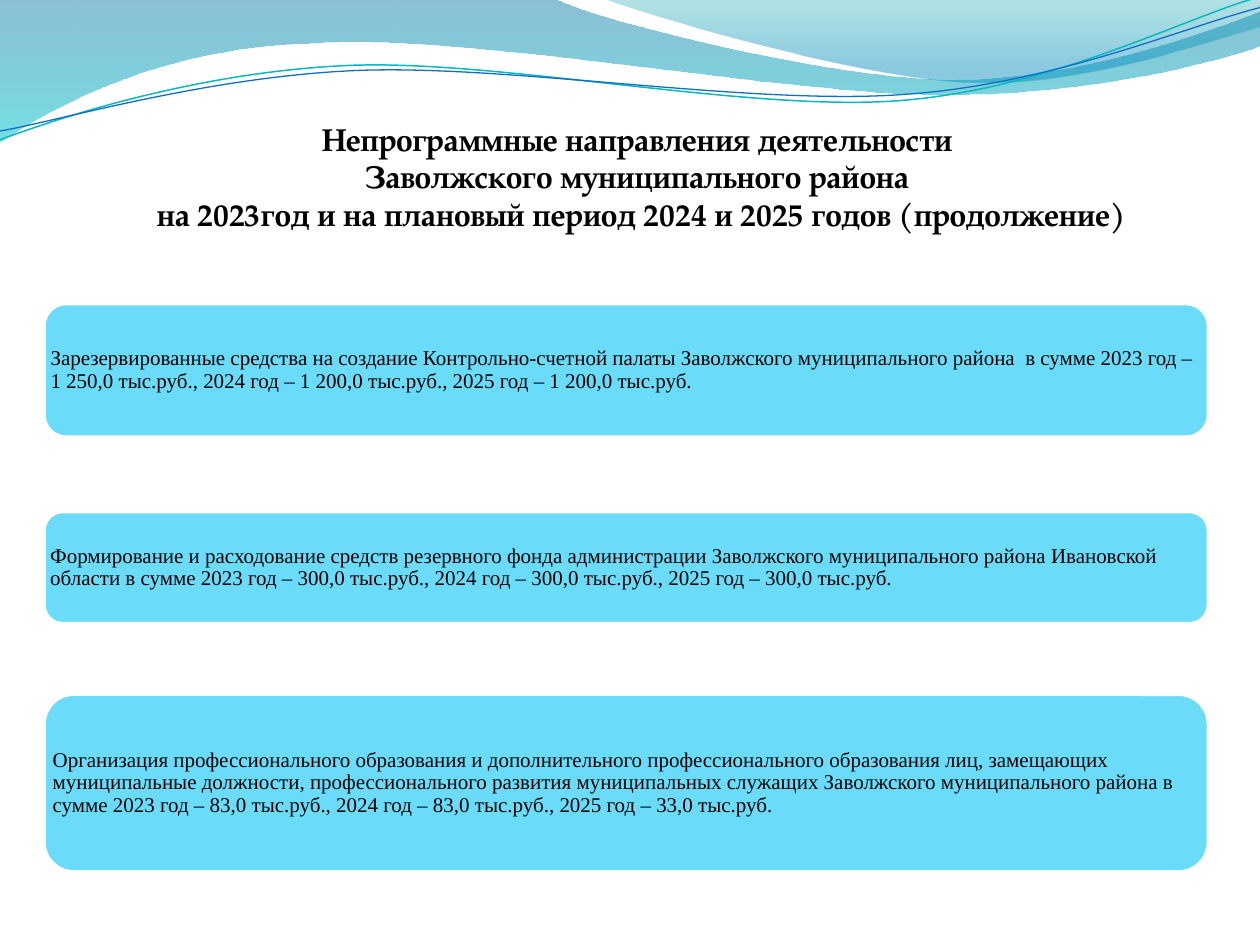
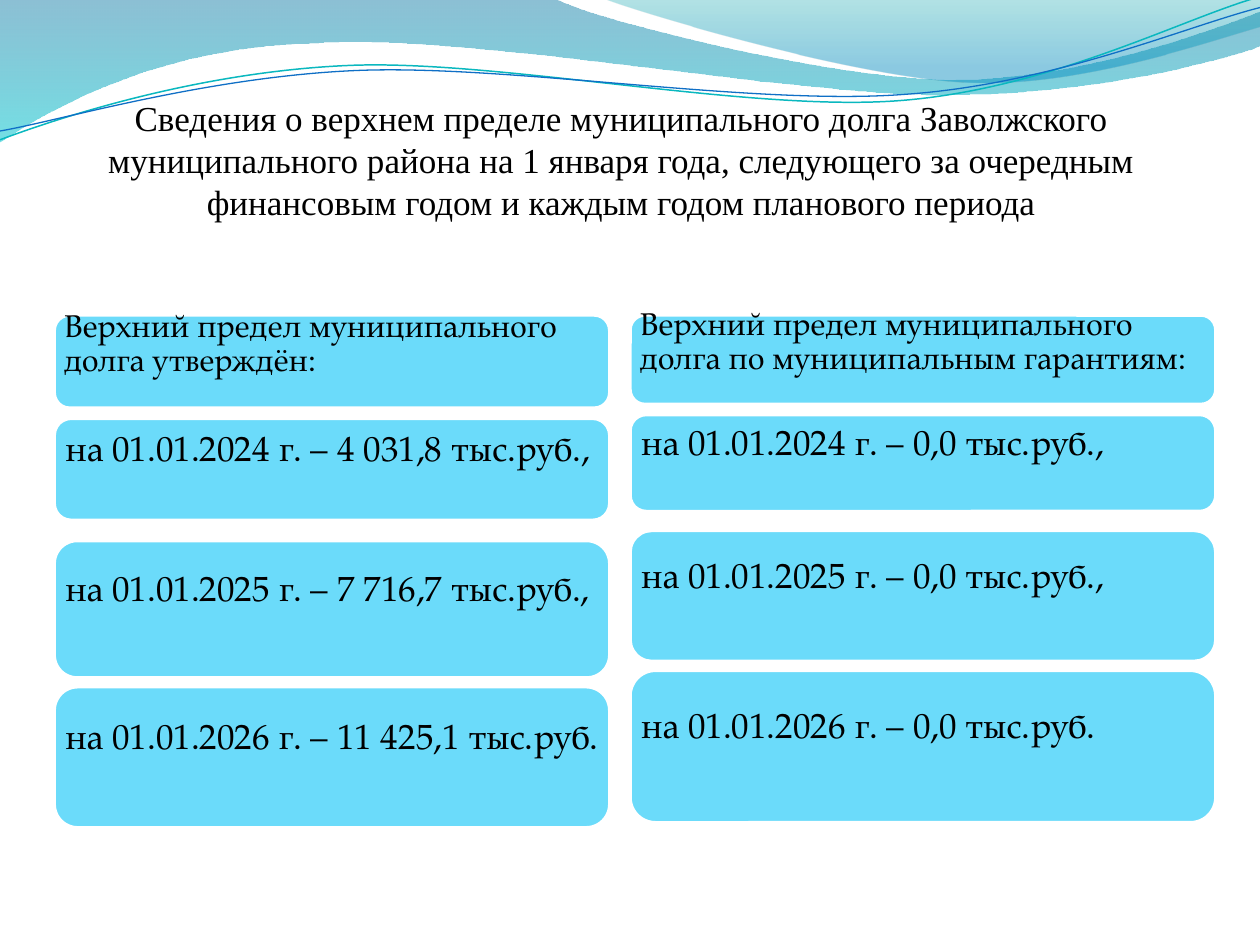
from pptx import Presentation
from pptx.dml.color import RGBColor as RGB
from pptx.enum.shapes import MSO_SHAPE as Kind
from pptx.enum.text import MSO_ANCHOR as Anchor, MSO_AUTO_SIZE as Fit, PP_ALIGN as Align
from pptx.oxml.ns import qn
from pptx.oxml.xmlchemy import OxmlElement as Tag
from pptx.util import Inches, Pt

# Content: titles as lines, cards as (top, height, style, text)
UNIT = {
    "title": ["Непрограммные направления деятельности ",
              "Заволжского муниципального района ",
              "на 2023год и на плановый период 2024 и 2025 годов (продолжение)"],
    "style": "bold", "spot": (0.59, 0.6),
    "cols": [(0.35, 9.24, [
        (2.41, 1.06, "note", "Зарезервированные средства на создание Контрольно-счетной палаты "
         "Заволжского муниципального района  в сумме 2023 год – 1 250,0 тыс.руб., "
         "2024 год – 1 200,0 тыс.руб., 2025 год – 1 200,0 тыс.руб."),
        (4.06, 0.89, "note", "Формирование и расходование средств резервного фонда администрации "
         "Заволжского муниципального района Ивановской области в сумме "
         "2023 год – 300,0 тыс.руб., 2024 год – 300,0 тыс.руб., 2025 год – 300,0 тыс.руб."),
        (5.51, 1.41, "note", "Организация профессионального образования и дополнительного "
         "профессионального образования лиц, замещающих муниципальные должности, "
         "профессионального развития муниципальных служащих Заволжского муниципального района "
         "в сумме 2023 год – 83,0 тыс.руб., 2024 год – 83,0 тыс.руб., 2025 год – 33,0 тыс.руб."),
    ])],
}
DEBT = {
    "title": ["Сведения о верхнем пределе муниципального долга Заволжского муниципального района "
              "на 1 января года, следующего за очередным финансовым годом и каждым годом "
              "планового периода"],
    "style": "plain", "spot": (0.43, 0.52),
    "cols": [
        (0.43, 4.41, [
            (2.5, 0.74, "head", "Верхний предел муниципального долга утверждён:"),
            (3.32, 0.81, "sum", "на 01.01.2024 г. – 4 031,8 тыс.руб.,"),
            (4.29, 1.09, "sum", "на 01.01.2025 г. – 7 716,7 тыс.руб.,"),
            (5.45, 1.12, "sum", "на 01.01.2026 г. – 11 425,1 тыс.руб."),
        ]),
        (5, 4.65, [
            (2.5, 0.71, "head", "Верхний предел муниципального долга по муниципальным гарантиям:"),
            (3.29, 0.77, "sum", "на 01.01.2024 г. – 0,0 тыс.руб.,"),
            (4.21, 1.04, "sum", "на 01.01.2025 г. – 0,0 тыс.руб.,"),
            (5.32, 1.21, "sum", "на 01.01.2026 г. – 0,0 тыс.руб."),
        ]),
    ],
}

# Theme: colours, type styles, and card insets as (side, extra below)
SERIF, BOOK = "Times New Roman", "TeX Gyre Pagella"
THEME = {
    "ink": "000000", "card": "6BDBFA", "edge": "FFFFFF",
    "type": {
        "bold": {"name": BOOK, "size": Pt(18), "bold": True},
        "plain": {"name": SERIF, "size": Pt(20), "bold": False},
        "note": {"name": SERIF, "size": Pt(12)},
        "head": {"name": BOOK, "size": Pt(18)},
        "sum": {"name": BOOK, "size": Pt(20)},
    },
    "inset": {"note": (0.05, 0), "head": (0.08, 0.27), "sum": (0.09, 0.3)},
}

# Waves: a start point, then straight steps (x, y) or curves (six numbers)
WAVES = [
    {"path": [(0, 0), (4.4, -0.01), (4.76, 0.17, 6.64, 0.63, 7.58, 0.63),
              (8.53, 0.63, 9.58, 0.26, 10, 0.09), (10.01, 0.36),
              (9.83, 0.44, 8.7, 0.76, 7.46, 0.75), (6.22, 0.75, 3.82, 0.28, 2.57, 0.34),
              (1.29, 0.36, 0.46, 0.83, -0.01, 1.13)],
     "fade": [(0, "0074A1", 45), (1, "00C6CF", 55)]},
    {"path": [(4.79, -0.01), (5.09, 0.11, 6.82, 0.62, 7.69, 0.65),
              (8.56, 0.69, 9.61, 0.32, 10, 0.21), (10, 0)],
     "fade": [(0, "00A1A9", 30), (0.8, "008BBF", 45)]},
    {"path": [(0, 1.11), (0.48, 0.93, 1.58, 0.57, 2.77, 0.52),
              (3.95, 0.47, 5.93, 0.89, 7.13, 0.8), (8.33, 0.71, 9.38, 0.15, 9.98, -0.02)],
     "line": ("0AB8BF", 0.85)},
    {"path": [(0, 1.04), (0.47, 0.96, 1.64, 0.61, 2.83, 0.56),
              (4.03, 0.51, 5.97, 0.84, 7.17, 0.75), (8.36, 0.67, 9.41, 0.21, 10, 0.06)],
     "line": ("0F6FC6", 0.75)},
]
GRID = 1000  # path units to the inch


def rgb(code):
    return RGB.from_string(code)


def put(obj, vals):
    for key, val in vals.items():
        setattr(obj, key, val)


def bend(form, path, pts):
    """Swap the straight steps of a freeform for cubic curves where six numbers are given."""
    left, top = (min(axis) for axis in zip(*pts))
    for seg, step in zip(list(form.element.iter(qn("a:lnTo"))), path[1:]):
        if len(step) == 2:
            continue
        curve = Tag("a:cubicBezTo")
        for x, y in zip(step[::2], step[1::2]):
            pt = Tag("a:pt")
            pt.set("x", str(round(x * GRID) - left))
            pt.set("y", str(round(y * GRID) - top))
            curve.append(pt)
        seg.getparent().replace(seg, curve)


def draw_wave(slide, wave):
    pts = [tuple(round(v * GRID) for v in step[-2:]) for step in wave["path"]]
    pen = slide.shapes.build_freeform(*pts[0], scale=Inches(1) / GRID)
    pen.add_line_segments(pts[1:], close="fade" in wave)
    form = pen.convert_to_shape()
    bend(form, wave["path"], pts)
    form.shadow.inherit = False
    if "line" in wave:
        form.fill.background()
        code, width = wave["line"]
        form.line.color.rgb = rgb(code)
        form.line.width = Pt(width)
        return form
    form.fill.gradient()
    form.fill.gradient_angle = 270
    for stop, (pos, code, _) in zip(form.fill.gradient_stops, wave["fade"]):
        stop.position = pos
        stop.color.rgb = rgb(code)
    for clr, (_, _, part) in zip(form.element.iter(qn("a:srgbClr")), wave["fade"]):
        alpha = Tag("a:alpha")
        alpha.set("val", str(part * 1000))
        clr.append(alpha)
    form.line.fill.background()
    return form


def write(para, lines, style):
    for n, line in enumerate(lines):
        if n:
            para.add_line_break()
        run = para.add_run()
        run.text = line
        put(run.font, THEME["type"][style])
        run.font.color.rgb = rgb(THEME["ink"])


def add_title(slide, data):
    title = slide.shapes.title
    left, top = data["spot"]
    put(title, {"left": Inches(left), "top": Inches(top),
                "width": Inches(9), "height": Inches(1.25)})
    frame = title.text_frame
    put(frame, {"margin_left": 0, "margin_right": 0, "margin_top": Inches(0.05),
                "margin_bottom": 0, "vertical_anchor": Anchor.BOTTOM,
                "auto_size": Fit.NONE, "word_wrap": True})
    para = frame.paragraphs[0]
    para.alignment = Align.CENTER
    write(para, data["title"], data["style"])


def add_card(slide, left, width, top, high, style, text):
    card = slide.shapes.add_shape(Kind.ROUNDED_RECTANGLE, *map(Inches, (left, top, width, high)))
    card.shadow.inherit = False
    card.fill.solid()
    card.fill.fore_color.rgb = rgb(THEME["card"])
    card.line.color.rgb = rgb(THEME["edge"])
    card.line.width = Pt(2)
    # The round corner already pushes the text in by about a twentieth of the height
    side, below = THEME["inset"][style]
    inset = Inches(max(0, side - 0.05 * high))
    frame = card.text_frame
    put(frame, {"margin_left": inset, "margin_right": 0, "margin_top": inset,
                "margin_bottom": inset + Inches(below),
                "vertical_anchor": Anchor.MIDDLE, "word_wrap": True})
    para = frame.paragraphs[0]
    put(para, {"alignment": Align.LEFT, "line_spacing": 0.9})
    write(para, [text], style)


def main():
    prs = Presentation()
    put(prs, {"slide_width": Inches(10), "slide_height": Inches(7.5)})
    base = prs.slide_layouts[5]
    pages = [(prs.slides.add_slide(base), data) for data in (UNIT, DEBT)]

    # Waves live on the shared layout
    for n, wave in enumerate(WAVES):
        form = draw_wave(pages[0][0], wave)
        form.element.nvSpPr.cNvPr.id = 20 + n
        base.shapes.element.insert(2 + n, form.element)

    # Titles and cards
    for slide, data in pages:
        add_title(slide, data)
        for left, width, cards in data["cols"]:
            for card in cards:
                add_card(slide, left, width, *card)
    prs.save("out.pptx")


if __name__ == "__main__":
    main()
